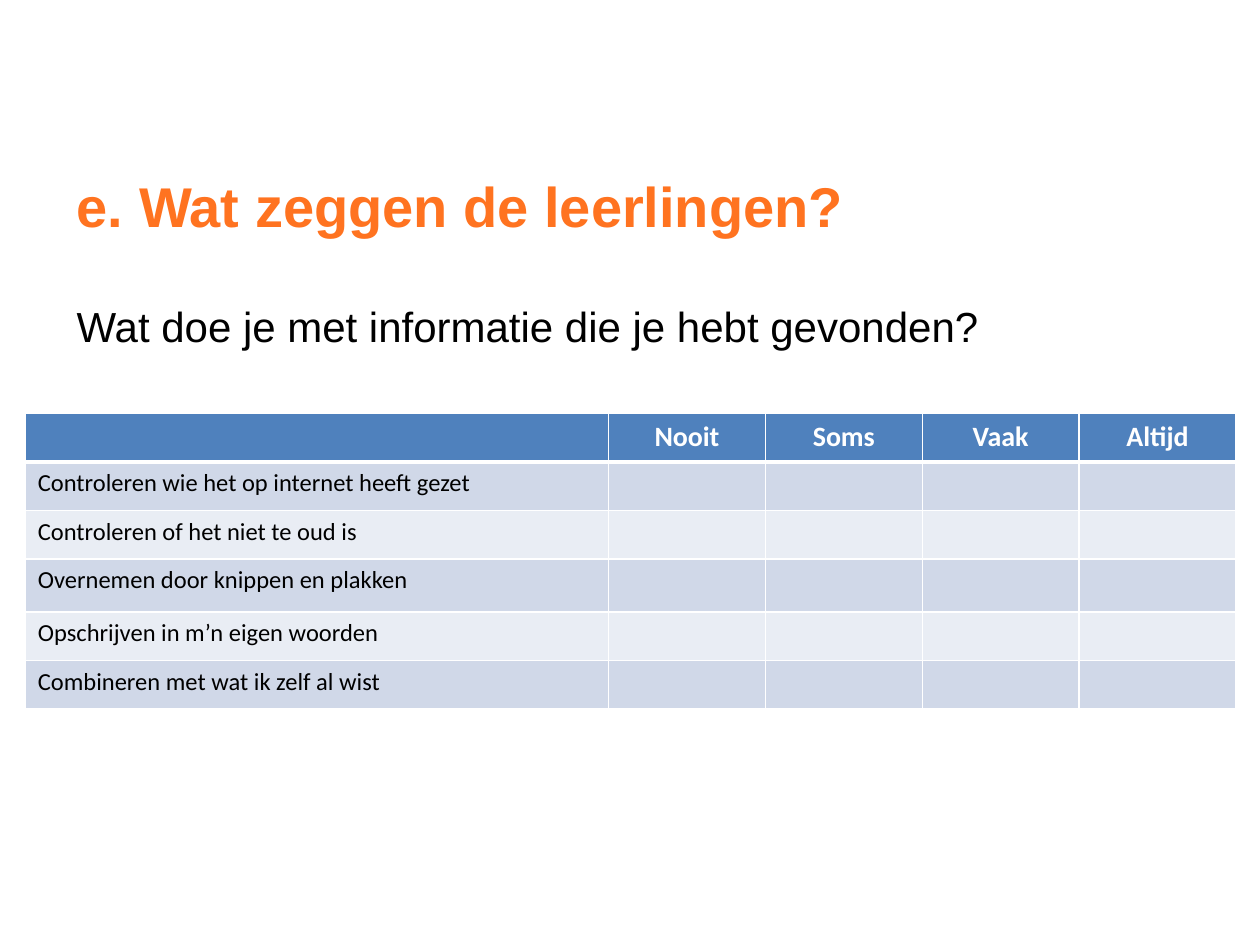
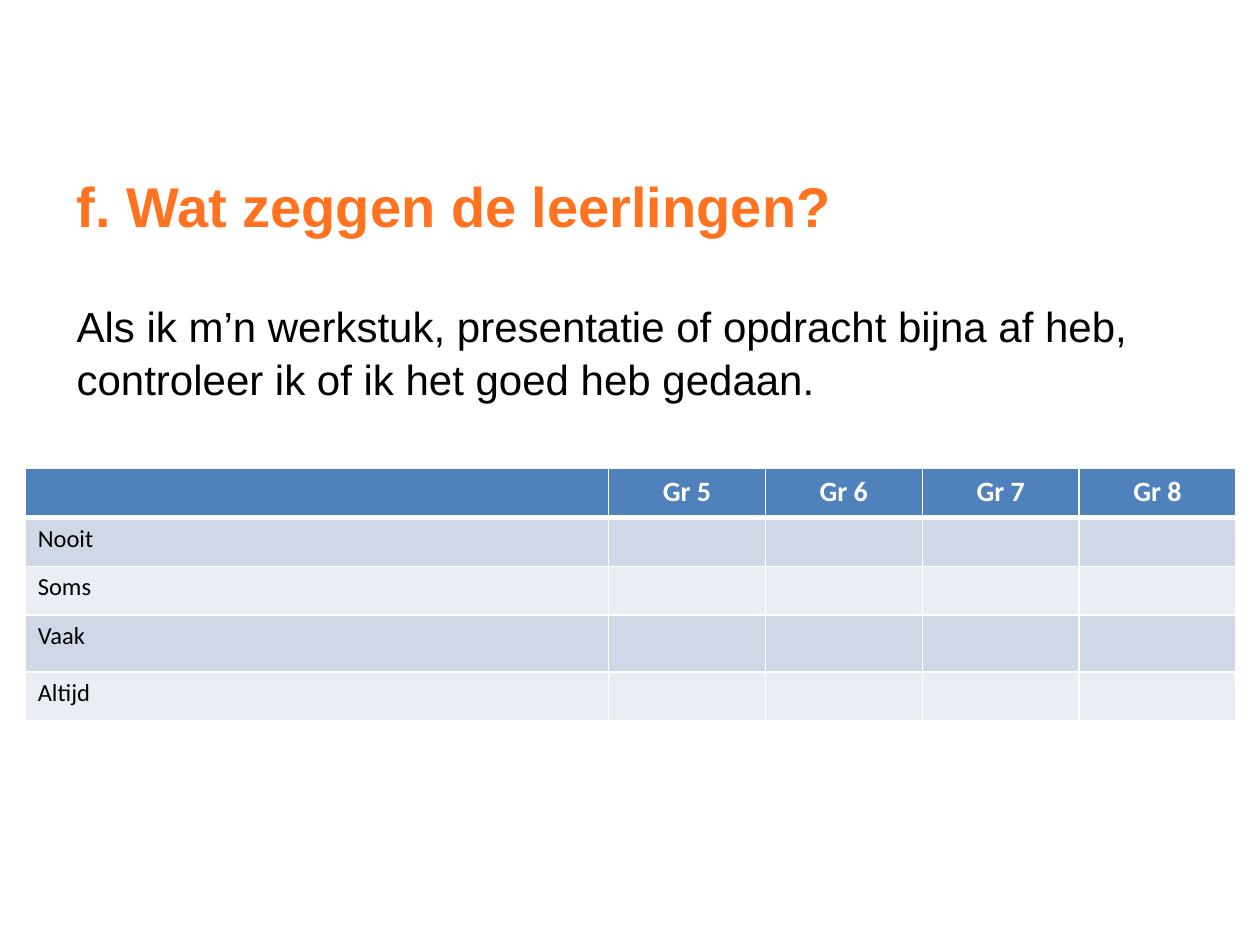
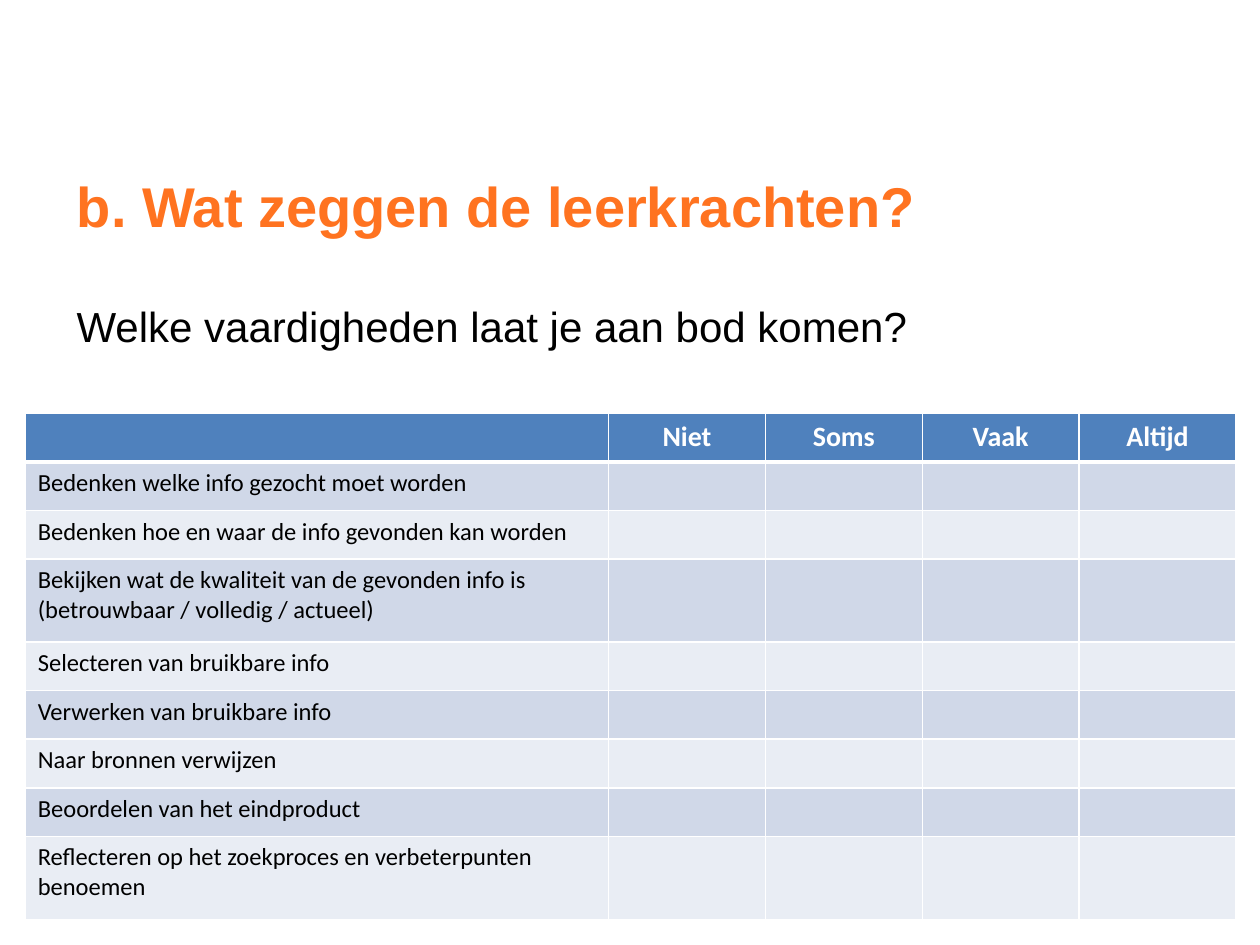
import pptx
import pptx.dml.color
import pptx.enum.text
import pptx.oxml.ns
import pptx.util
from lxml import etree

Inches = pptx.util.Inches
Pt = pptx.util.Pt
ALIGN = pptx.enum.text.PP_ALIGN
ANCHOR = pptx.enum.text.MSO_ANCHOR
qn = pptx.oxml.ns.qn

ORANGE, BLACK, WHITE = "FF7320", "000000", "FFFFFF"
HEADER_BLUE = "4F81BD"
BANDS = ("D0D8E8", "E9EDF4")
HEADING_FONT, TABLE_FONT = "Arial", "Calibri"
TEXT_LEFT, TEXT_WIDTH = 0.51, 9
TABLE_LEFT, TABLE_WIDTH, LABEL_WIDTH = 0.2, 9.61, 4.63
HEADER_SIZE, LABEL_SIZE = 16, 14
THIN, THICK = 1, 3

# tall_rows maps a row number to its height; the other rows share the rest.
SURVEYS = [
    dict(
        title="e. Wat zeggen de leerlingen?",
        question="Wat doe je met informatie die je hebt gevonden?",
        answers=["Nooit", "Soms", "Vaak", "Altijd"],
        labels=[
            "Controleren wie het op internet heeft gezet",
            "Controleren of het niet te oud is",
            "Overnemen door knippen en plakken",
            "Opschrijven in m’n eigen woorden",
            "Combineren met wat ik zelf al wist",
        ],
        top=3.28, height=2.35, tall_rows={3: 0.42},
    ),
    dict(
        title="f. Wat zeggen de leerlingen?",
        question="Als ik m’n werkstuk, presentatie of opdracht bijna af heb, "
                 "controleer ik of ik het goed heb gedaan.",
        answers=["Gr 5", "Gr 6", "Gr 7", "Gr 8"],
        labels=["Nooit", "Soms", "Vaak", "Altijd"],
        top=3.72, height=2, tall_rows={3: 0.45},
    ),
    dict(
        title="b. Wat zeggen de leerkrachten?",
        question="Welke vaardigheden laat je aan bod komen?",
        answers=["Niet", "Soms", "Vaak", "Altijd"],
        labels=[
            "Bedenken welke info gezocht moet worden",
            "Bedenken hoe en waar de info gevonden kan worden",
            "Bekijken wat de kwaliteit van de gevonden info is "
            "(betrouwbaar / volledig / actueel)",
            "Selecteren van bruikbare info",
            "Verwerken van bruikbare info",
            "Naar bronnen verwijzen",
            "Beoordelen van het eindproduct",
            "Reflecteren op het zoekproces en verbeterpunten benoemen",
        ],
        top=3.28, height=4.02, tall_rows={3: 0.66, 8: 0.66},
    ),
]


def rgb(value):
    return pptx.dml.color.RGBColor.from_string(value)


def add_run(paragraph, text, font, size, color, bold=False):
    run = paragraph.add_run()
    run.text = text
    run.font.name = font
    run.font.size = Pt(size)
    run.font.color.rgb = rgb(color)
    run.font.bold = bold


def add_title(slide, text):
    title = slide.shapes.title
    title.left, title.top = Inches(TEXT_LEFT), Inches(1)
    title.width, title.height = Inches(TEXT_WIDTH), Inches(1.25)
    title.text_frame.vertical_anchor = ANCHOR.MIDDLE
    paragraph = title.text_frame.paragraphs[0]
    paragraph.alignment = ALIGN.LEFT
    add_run(paragraph, text, HEADING_FONT, 32, ORANGE, bold=True)


def add_question(slide, text):
    question = slide.shapes.add_textbox(
        Inches(TEXT_LEFT), Inches(2.32), Inches(TEXT_WIDTH), Inches(4.1))
    question.text_frame.word_wrap = True
    paragraph = question.text_frame.paragraphs[0]
    paragraph.line_spacing = 1.05
    add_run(paragraph, text, HEADING_FONT, 24, BLACK)


def set_borders(cell, top, bottom):
    properties = cell._tc.get_or_add_tcPr()
    widths = {"a:lnL": THIN, "a:lnR": THIN, "a:lnT": top, "a:lnB": bottom}
    for side, width in widths.items():
        line = etree.SubElement(properties, qn(side), w=str(Pt(width)))
        fill = etree.SubElement(line, qn("a:solidFill"))
        etree.SubElement(fill, qn("a:srgbClr"), val=WHITE)


def fill_cell(cell, text, row):
    is_header = row == 0
    set_borders(cell, top=THICK if row == 1 else THIN,
                bottom=THICK if is_header else THIN)
    cell.fill.solid()
    cell.fill.fore_color.rgb = rgb(HEADER_BLUE if is_header else BANDS[(row - 1) % 2])
    size = HEADER_SIZE if is_header else LABEL_SIZE
    paragraph = cell.text_frame.paragraphs[0]
    if is_header:
        paragraph.alignment = ALIGN.CENTER
    if text:
        add_run(paragraph, text, TABLE_FONT, size,
                WHITE if is_header else BLACK, bold=is_header)
    else:  # keeps the empty line from stretching the row
        etree.SubElement(paragraph._p, qn("a:endParaRPr"), sz=str(size * 100))


def add_answer_table(slide, answers, labels, top, height, tall_rows):
    row_count, column_count = len(labels) + 1, len(answers) + 1
    table = slide.shapes.add_table(
        row_count, column_count, Inches(TABLE_LEFT), Inches(top),
        Inches(TABLE_WIDTH), Inches(height)).table

    answer_width = (TABLE_WIDTH - LABEL_WIDTH) / len(answers)
    for index, column in enumerate(table.columns):
        column.width = Inches(answer_width if index else LABEL_WIDTH)

    row_height = (height - sum(tall_rows.values())) / (row_count - len(tall_rows))
    for index, row in enumerate(table.rows):
        row.height = Inches(tall_rows.get(index, row_height))

    texts = [["", *answers]] + [[label] + [""] * len(answers) for label in labels]
    for row, row_texts in enumerate(texts):
        for column, text in enumerate(row_texts):
            fill_cell(table.cell(row, column), text, row)


def main():
    deck = pptx.Presentation()
    deck.slide_width, deck.slide_height = Inches(10), Inches(7.5)
    title_only = deck.slide_layouts[5]
    for survey in SURVEYS:
        slide = deck.slides.add_slide(title_only)
        add_title(slide, survey["title"])
        add_question(slide, survey["question"])
        add_answer_table(slide, survey["answers"], survey["labels"],
                         survey["top"], survey["height"], survey["tall_rows"])
    deck.save("out.pptx")


if __name__ == "__main__":
    main()
